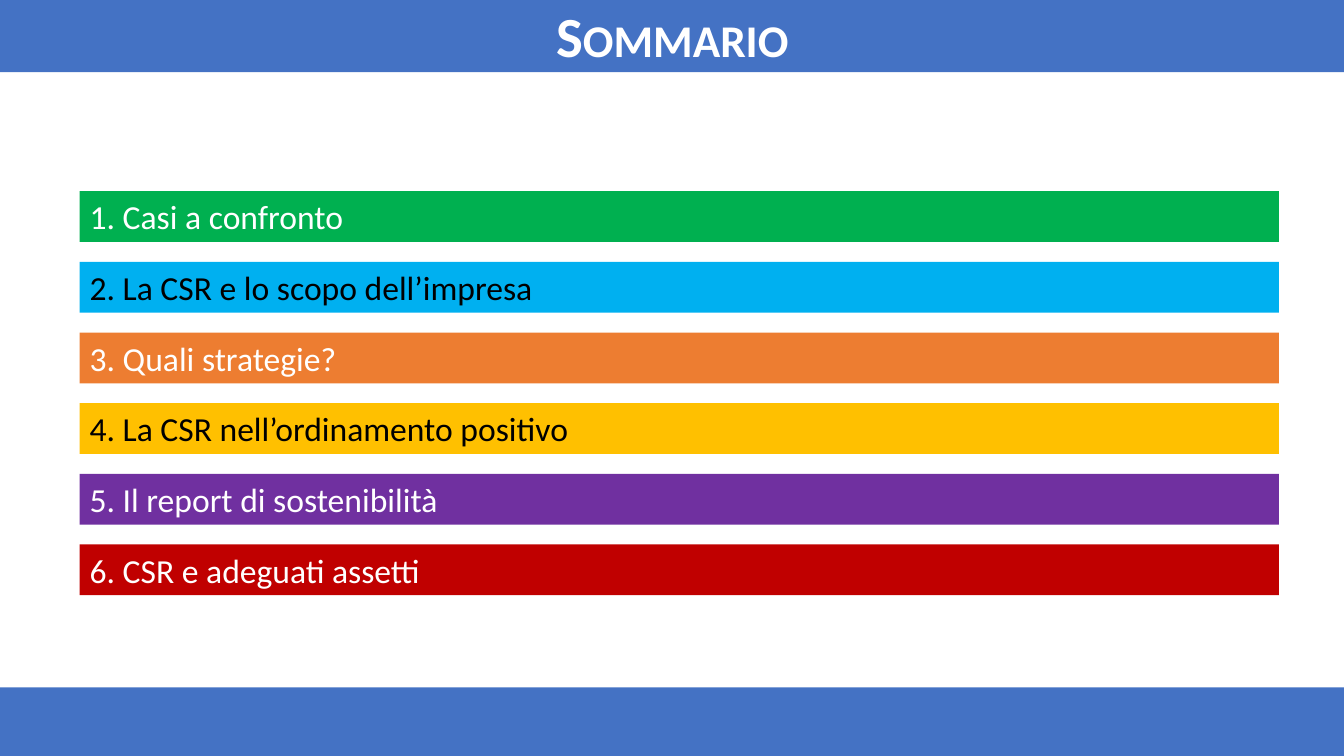
from pptx import Presentation
from pptx.dml.color import RGBColor
from pptx.enum.shapes import MSO_SHAPE
from pptx.enum.text import MSO_ANCHOR, MSO_AUTO_SIZE, PP_ALIGN
from pptx.util import Cm, Pt

COLORS = {
    "blue": "4472C4",
    "green": "00B050",
    "sky": "00B0F0",
    "orange": "ED7D31",
    "gold": "FFC000",
    "purple": "7030A0",
    "red": "C00000",
    "white": "FFFFFF",
    "black": "000000",
}
CHAPTERS = [
    ("1. Casi a confronto", "green", "white"),
    ("2. La CSR e lo scopo dell’impresa", "sky", "black"),
    ("3. Quali strategie?", "orange", "white"),
    ("4. La CSR nell’ordinamento positivo", "gold", "black"),
    ("5. Il report di sostenibilità", "purple", "white"),
    ("6. CSR e adeguati assetti", "red", "white"),
]
CHAPTER_TOP = 4.82
CHAPTER_PITCH = 1.78


def add_bar(slide, left, top, width, height, color):
    shape = slide.shapes.add_shape(
        MSO_SHAPE.RECTANGLE, Cm(left), Cm(top), Cm(width), Cm(height)
    )
    shape.shadow.inherit = False
    shape.fill.solid()
    shape.fill.fore_color.rgb = RGBColor.from_string(COLORS[color])
    shape.line.fill.background()
    return shape


def format_text(paragraph, alignment, size, color):
    paragraph.alignment = alignment
    font = paragraph.runs[0].font
    font.name = "Calibri"
    font.size = Pt(size)
    font.color.rgb = RGBColor.from_string(COLORS[color])
    return font


presentation = Presentation()
presentation.slide_width = Cm(33.87)
presentation.slide_height = Cm(19.05)
slide = presentation.slides.add_slide(presentation.slide_layouts.get_by_name("Title Only"))

add_bar(slide, 0, 17.32, 33.87, 1.73, "blue")
add_bar(slide, 0, 0, 33.87, 1.82, "blue")

title = slide.shapes.title
title.left, title.top, title.width, title.height = Cm(9.78), Cm(0.23), Cm(14.33), Cm(1.5)
title.element.getparent().append(title.element)
title_frame = title.text_frame
title_frame.text = "Sommario"
title_frame.auto_size = MSO_AUTO_SIZE.NONE
title_frame.vertical_anchor = MSO_ANCHOR.MIDDLE
title_frame.margin_left = title_frame.margin_right = Cm(0.18)
title_frame.margin_top = title_frame.margin_bottom = Cm(0.1)
title_paragraph = title_frame.paragraphs[0]
title_paragraph.line_spacing = 0.9
format_text(title_paragraph, PP_ALIGN.CENTER, 40.5, "white").bold = True
title_paragraph.runs[0]._r.get_or_add_rPr().set("cap", "small")

for index, (text, fill_color, text_color) in enumerate(CHAPTERS):
    chapter = add_bar(slide, 2.01, CHAPTER_TOP + index * CHAPTER_PITCH, 30.22, 1.28, fill_color)
    text_frame = chapter.text_frame
    text_frame.text = text
    text_frame.word_wrap = True
    text_frame.auto_size = MSO_AUTO_SIZE.SHAPE_TO_FIT_TEXT
    text_frame.vertical_anchor = MSO_ANCHOR.TOP
    format_text(text_frame.paragraphs[0], PP_ALIGN.LEFT, 24, text_color)

presentation.save("out.pptx")
